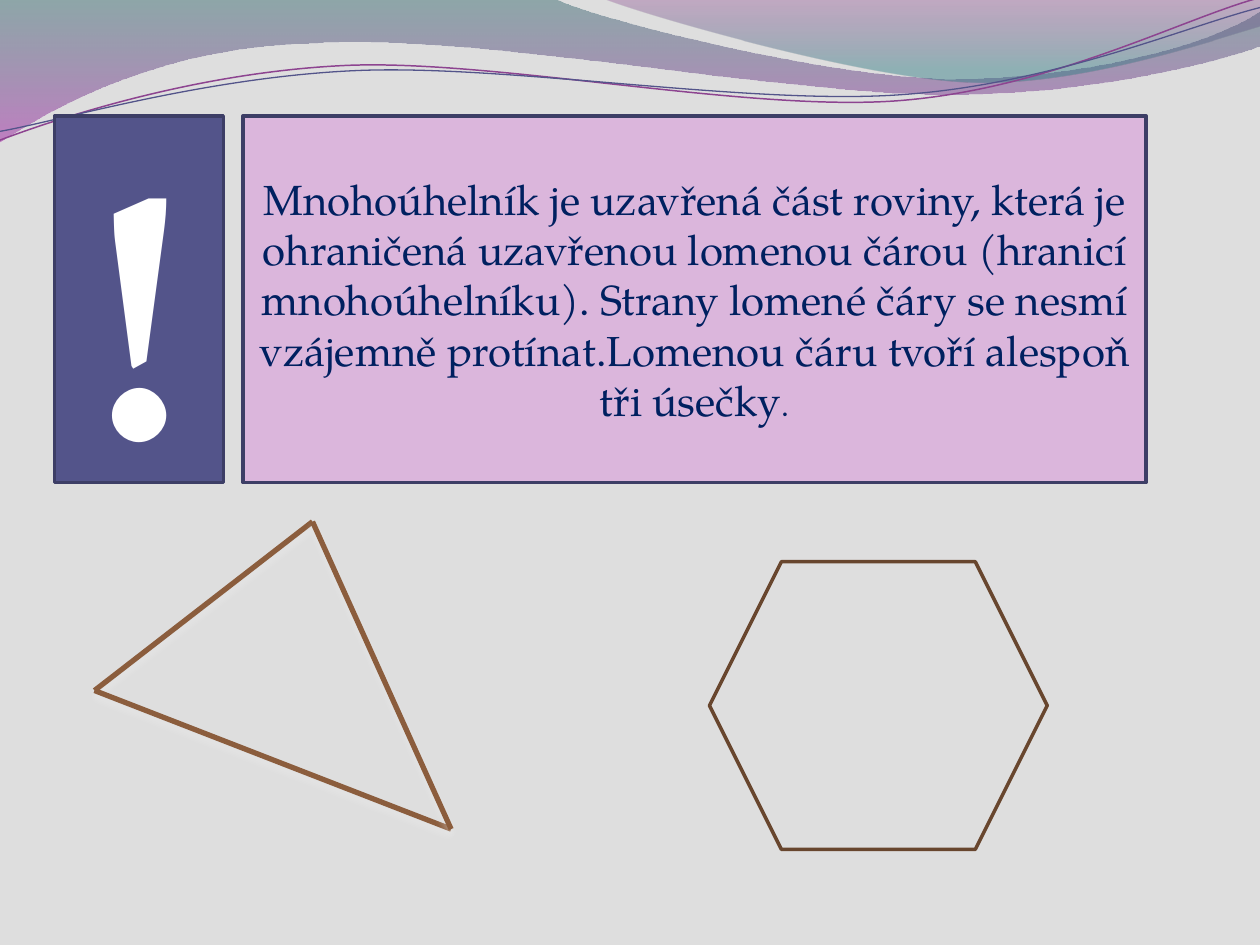
import pptx
import pptx.dml.color
import pptx.enum.shapes
import pptx.enum.text
import pptx.oxml
import pptx.oxml.ns
import pptx.util

Pt = pptx.util.Pt
SHAPES = pptx.enum.shapes.MSO_SHAPE
NAMESPACE = pptx.oxml.ns.nsdecls("a")
FONT = "TeX Gyre Pagella"

# Outlines: a start point, then segments of one point (line) or three (Bézier curve).
WIDE_BAND = [(0, 0), [(317, -0.7)],
             [(343, 12), (478, 45), (546, 45)], [(614, 45), (690, 27), (720, 6.5)],
             [(721, 26)], [(708, 32), (626, 55), (537, 54)],
             [(448, 54), (275, 20), (185, 24.5)], [(93, 26), (33, 60), (-0.7, 81.4)]]
SHORT_BAND = [(345, -0.7), [(366, 8), (491, 44.5), (554, 47)],
              [(616, 49.5), (692, 23), (720, 15)], [(720, 0)]]
PURPLE_WAVE = [(-1.4, 63.1), [(33.7, 51.7), (114.3, 29.4), (199.4, 29.8)],
               [(284.4, 30.5), (425.8, 67.2), (512, 64.8)],
               [(599.2, 62.3), (676, 25.9), (720.6, 15.9)]]
BLUE_WAVE = [(-1.1, 58.1), [(33.2, 53.7), (118.2, 32.6), (204.3, 33)],
             [(290.4, 33.4), (429.1, 63.8), (515.3, 61.4)],
             [(601.4, 59.4), (678.9, 30), (721.4, 21.3)]]

DEFINITION = ("Mnohoúhelník je uzavřená část roviny, která je ohraničená uzavřenou "
              "lomenou čárou (hranicí mnohoúhelníku). Strany lomené čáry se nesmí "
              "vzájemně protínat.Lomenou čáru tvoří alespoň tři úsečky")
TRIANGLE = [(178.6, 298.1), (54, 394.6), (257.8, 473.8)]


def color(hex_string):
    return pptx.dml.color.RGBColor.from_string(hex_string)


def set_line(shape, hex_string, width):
    shape.line.color.rgb = color(hex_string)
    shape.line.width = Pt(width)


def add_outline(slide, outline, close):
    """Build a freeform, then turn each run of three points into a Bézier curve."""
    start, *segments = outline
    builder = slide.shapes.build_freeform(Pt(start[0]), Pt(start[1]))
    builder.add_line_segments([(Pt(x), Pt(y)) for segment in segments for x, y in segment],
                              close=close)
    shape = builder.convert_to_shape()
    shape.shadow.inherit = False
    lines = iter(shape.element.spPr.xpath(".//a:lnTo"))
    for segment in segments:
        parts = [next(lines) for _ in segment]
        if len(parts) == 3:
            curve = pptx.oxml.parse_xml(f"<a:cubicBezTo {NAMESPACE}/>")
            parts[0].addprevious(curve)
            for part in parts:
                curve.append(part[0])
                part.getparent().remove(part)
    return shape


def add_band(slide, outline, stops):
    """Add a downward gradient shape; each stop is position, colour, opacity percent."""
    band = add_outline(slide, outline, close=True)
    band.line.fill.background()
    band.fill.gradient()
    band.fill.gradient_angle = 270
    for stop, (position, hex_string, _) in zip(band.fill.gradient_stops, stops):
        stop.position = position
        stop.color.rgb = color(hex_string)
    for node, (_, _, opacity) in zip(band.element.spPr.xpath("./a:gradFill//a:srgbClr"), stops):
        node.append(pptx.oxml.parse_xml(f'<a:alpha {NAMESPACE} val="{opacity * 1000}"/>'))


def add_wave(slide, outline, hex_string, width):
    wave = add_outline(slide, outline, close=False)
    wave.fill.background()
    wave.rotation = 357.3
    set_line(wave, hex_string, width)


def add_box(slide, left, width, fill, runs, font_color, bold=False):
    box = slide.shapes.add_shape(SHAPES.RECTANGLE, Pt(left), Pt(66.2), Pt(width), Pt(209.5))
    box.shadow.inherit = False
    box.fill.solid()
    box.fill.fore_color.rgb = color(fill)
    set_line(box, "3D3E66", 2)
    box.text_frame.word_wrap = True
    box.text_frame.vertical_anchor = pptx.enum.text.MSO_ANCHOR.MIDDLE
    para = box.text_frame.paragraphs[0]
    para.alignment = pptx.enum.text.PP_ALIGN.CENTER
    para.font.name = FONT
    para.font.bold = bold
    para.font.color.rgb = color(font_color)
    for text, size in runs:
        span = para.add_run()
        span.text = text
        span.font.size = Pt(size)


def add_side(slide, start, end):
    """Add one triangle side with a pale soft shadow below it."""
    side = slide.shapes.add_connector(
        pptx.enum.shapes.MSO_CONNECTOR.STRAIGHT, *[Pt(value) for value in start + end])
    set_line(side, "8B5D3D", 3)
    side.element.spPr.append(pptx.oxml.parse_xml(
        f'<a:effectLst {NAMESPACE}>'
        f'<a:outerShdw blurRad="{Pt(4.5)}" dist="{Pt(3)}" dir="5400000" rotWithShape="0">'
        '<a:srgbClr val="F0F0F0"><a:alpha val="48000"/></a:srgbClr>'
        '</a:outerShdw></a:effectLst>'))


def add_hexagon(slide):
    hexagon = slide.shapes.add_shape(SHAPES.HEXAGON, Pt(405.4), Pt(321), Pt(193), Pt(164.4))
    hexagon.shadow.inherit = False
    hexagon.fill.background()
    set_line(hexagon, "68462E", 2)


def main():
    deck = pptx.Presentation()
    deck.slide_width, deck.slide_height = Pt(720), Pt(540)
    slide = deck.slides.add_slide(deck.slide_layouts.get_by_name("Blank"))
    slide.background.fill.solid()
    slide.background.fill.fore_color.rgb = color("DEDEDE")

    add_band(slide, WIDE_BAND, [(0, "2D6368", 45), (1, "A530A9", 55)])
    add_band(slide, SHORT_BAND, [(0, "7F2F82", 30), (0.8, "2F7B82", 45)])
    add_wave(slide, PURPLE_WAVE, "8D4490", 0.85)
    add_wave(slide, BLUE_WAVE, "53548A", 0.75)

    add_box(slide, 31.2, 96.4, "53548A", [("!", 199)], "FFFFFF", bold=True)
    add_box(slide, 138.8, 516.2, "DBB6DC", [(DEFINITION, 24), (".", 18)], "002060")

    for start, end in zip(TRIANGLE, TRIANGLE[1:] + TRIANGLE[:1]):
        add_side(slide, start, end)
    add_hexagon(slide)
    deck.save("out.pptx")


if __name__ == "__main__":
    main()
